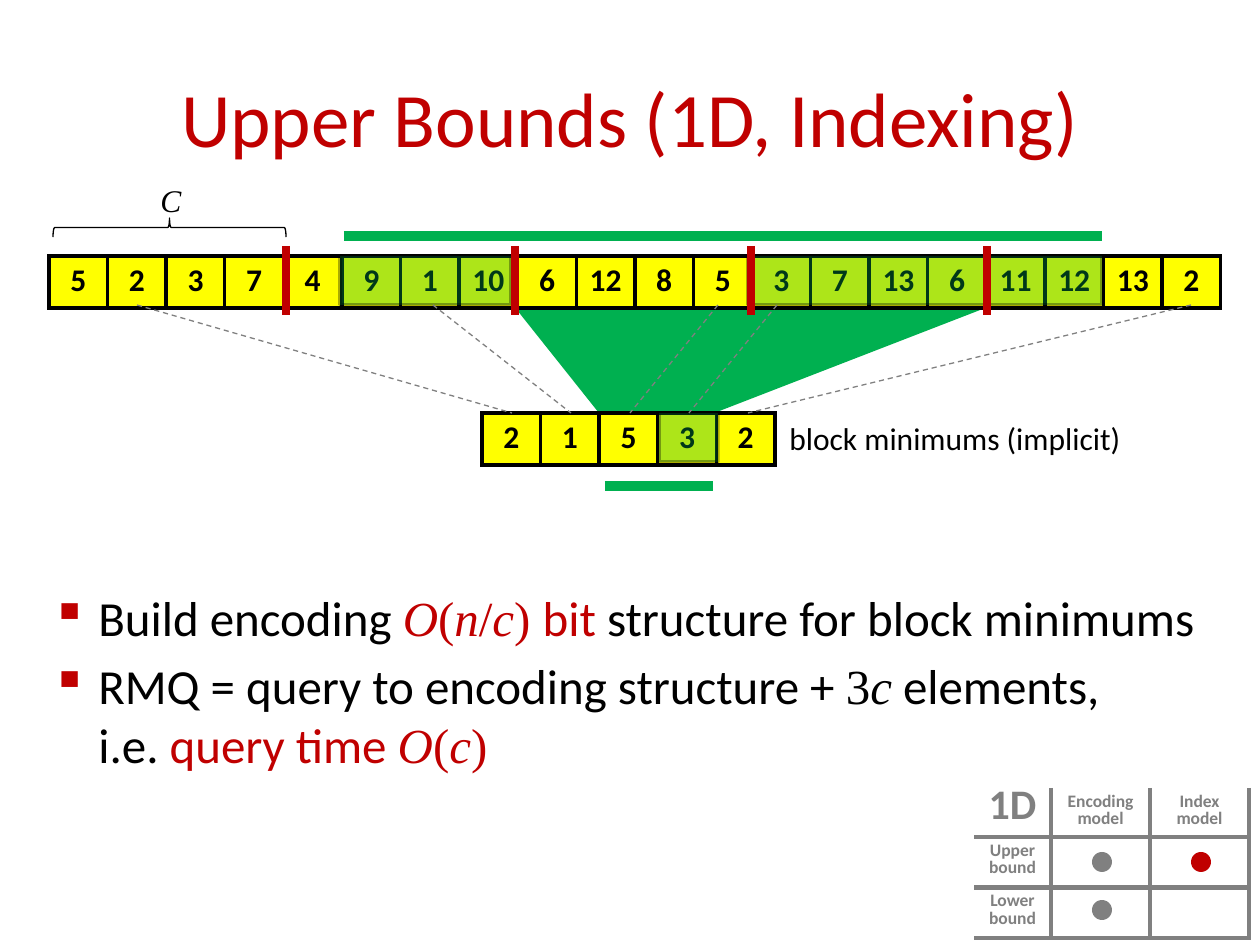
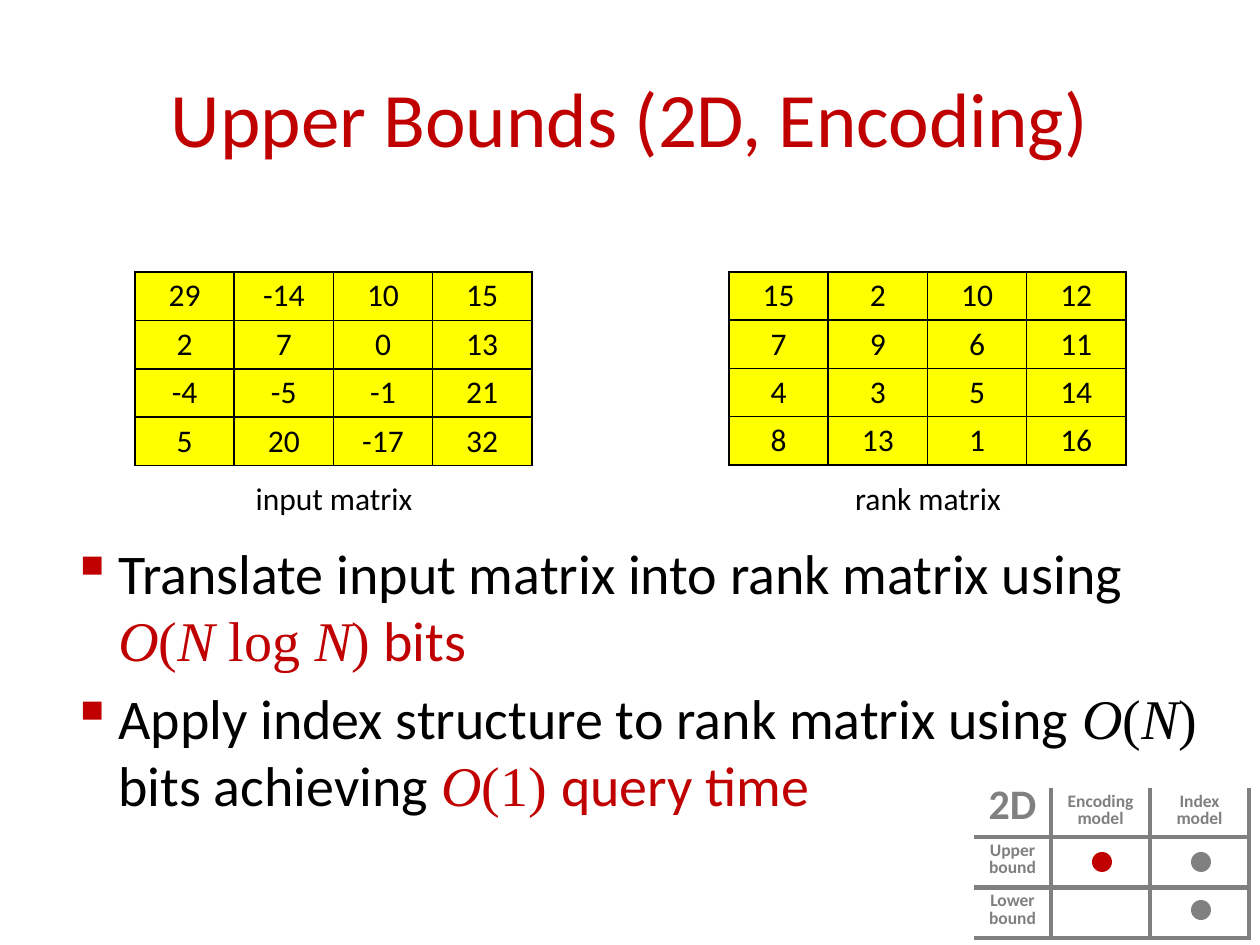
from itertools import groupby

from lxml.etree import SubElement
from pptx import Presentation
from pptx.dml.color import RGBColor
from pptx.enum.dml import MSO_LINE
from pptx.enum.shapes import MSO_CONNECTOR, MSO_SHAPE
from pptx.enum.text import MSO_ANCHOR, PP_ALIGN
from pptx.oxml.ns import qn
from pptx.util import Pt

PX = 914400 / 126
RED = RGBColor(0xC0, 0x00, 0x00)
GREEN = RGBColor(0x00, 0xB0, 0x50)
YELLOW = RGBColor(0xFF, 0xFF, 0x00)
GRAY = RGBColor(0x80, 0x80, 0x80)
BLACK = RGBColor(0x00, 0x00, 0x00)
BODY_FONT = "Calibri"
MATH_FONT = "Times New Roman"

ARRAY = [5, 2, 3, 7, 4, 9, 1, 10, 6, 12, 8, 5, 3, 7, 13, 6, 11, 12, 13, 2]
BLOCK_MINIMUMS = [2, 1, 5, 3, 2]
INPUT_MATRIX = [[29, -14, 10, 15], [2, 7, 0, 13], [-4, -5, -1, 21], [5, 20, -17, 32]]
RANK_MATRIX = [[15, 2, 10, 12], [7, 9, 6, 11], [4, 3, 5, 14], [8, 13, 1, 16]]

ARRAY_TOP, ARRAY_BOTTOM = 256, 305
MINIMUMS_TOP = 413
CELL_WIDTH = 59
BLOCK_BORDERS = [286, 515, 751, 987]
MINIMUM_SOURCES = [137, 433, 718, 777, 1191]


def emu(*lengths):
    return [round(length * PX) for length in lengths]


def add_run(paragraph, text, size, color=BLACK, font=BODY_FONT, bold=False, italic=False):
    run = paragraph.add_run()
    run.text = text
    run.font.size = Pt(size)
    run.font.name = font
    run.font.bold = bold
    run.font.italic = italic
    run.font.color.rgb = color


def add_math(paragraph, formula, size, color):
    """Set a formula with its one-letter names in italics."""
    for is_word, letters in groupby(formula, str.isalpha):
        text = "".join(letters)
        add_run(paragraph, text, size, color, MATH_FONT, italic=is_word and len(text) == 1)


def add_titled_slide(deck, heading):
    slide = deck.slides.add_slide(deck.slide_layouts[5])
    title = slide.shapes.title
    title.left, title.top, title.width, title.height = emu(63, 38, 1134, 158)
    title.text_frame.vertical_anchor = MSO_ANCHOR.MIDDLE
    paragraph = title.text_frame.paragraphs[0]
    paragraph.alignment = PP_ALIGN.CENTER
    add_run(paragraph, heading, 44, RED)
    return slide


def add_text_frame(slide, left, top, width, height):
    frame = slide.shapes.add_textbox(*emu(left, top, width, height)).text_frame
    frame.word_wrap = True
    return frame


def add_label(slide, text, left, top, width, align=PP_ALIGN.CENTER, **style):
    paragraph = add_text_frame(slide, left, top, width, 50).paragraphs[0]
    paragraph.alignment = align
    add_run(paragraph, text, 18, **style)


def add_bullets(slide, box, size, items):
    """Add bullets made of (kind, text, colour) pieces; kind is text, math or break."""
    frame = add_text_frame(slide, *box)
    for index, pieces in enumerate(items):
        paragraph = frame.paragraphs[0] if index == 0 else frame.add_paragraph()
        paragraph.space_before = Pt(size * 0.2)
        properties = paragraph._p.get_or_add_pPr()
        indent = emu(47)[0]
        properties.set("marL", str(indent))
        properties.set("indent", str(-indent))
        bullet_color = SubElement(properties, qn("a:buClr"))
        SubElement(bullet_color, qn("a:srgbClr"), val=str(RED))
        SubElement(properties, qn("a:buChar"), char="▪")
        for kind, text, color in pieces:
            if kind == "break":
                paragraph.add_line_break()
            elif kind == "math":
                add_math(paragraph, text, size, color)
            else:
                add_run(paragraph, text, size, color)


def set_borders(cell, color, width, sides="LRTB"):
    properties = cell._tc.get_or_add_tcPr()
    for side in "LRTB":
        line = SubElement(properties, qn(f"a:ln{side}"), w=str(Pt(width)))
        if side in sides:
            fill = SubElement(line, qn("a:solidFill"))
            SubElement(fill, qn("a:srgbClr"), val=str(color))
        else:
            SubElement(line, qn("a:noFill"))


def add_plain_table(slide, rows, columns, box):
    table = slide.shapes.add_table(rows, columns, *emu(*box)).table
    table.first_row = table.horz_banding = False
    return table


def add_number_table(slide, numbers, box, border, bold=False, margin=6):
    table = add_plain_table(slide, len(numbers), len(numbers[0]), box)
    for row, values in enumerate(numbers):
        for column, value in enumerate(values):
            cell = table.cell(row, column)
            cell.margin_top = cell.margin_bottom = emu(margin)[0]
            set_borders(cell, BLACK, border)
            cell.fill.solid()
            cell.fill.fore_color.rgb = YELLOW
            paragraph = cell.text_frame.paragraphs[0]
            paragraph.alignment = PP_ALIGN.CENTER
            add_run(paragraph, str(value), 18, bold=bold)


def add_overview(slide, dimension, dots):
    """Add the corner grid; dots maps (row, column) of a result to its colour."""
    labels = [
        [[dimension], ["Encoding", "model"], ["Index", "model"]],
        [["Upper", "bound"], [""], [""]],
        [["Lower", "bound"], [""], [""]],
    ]
    table = add_plain_table(slide, 3, 3, (974, 788, 275, 147))
    for column, width in zip(table.columns, emu(77, 99, 99)):
        column.width = width
    for row, row_labels in enumerate(labels):
        for column, lines in enumerate(row_labels):
            cell = table.cell(row, column)
            sides = "RB" + ("L" if column else "") + ("T" if row else "")
            set_borders(cell, GRAY, 3, sides)
            cell.fill.background()
            for index, text in enumerate(lines):
                frame = cell.text_frame
                paragraph = frame.paragraphs[0] if index == 0 else frame.add_paragraph()
                paragraph.alignment = PP_ALIGN.CENTER
                paragraph.line_spacing = Pt(10)
                add_run(paragraph, text, 24 if text == dimension else 10, GRAY, bold=True)
    table.cell(0, 0).vertical_anchor = MSO_ANCHOR.BOTTOM
    for (row, column), color in dots.items():
        dot = add_shape(slide, MSO_SHAPE.OVAL, 1092 + 99 * column, 852 + 48 * row, 20, 20)
        fill_shape(dot, color)


def add_shape(slide, kind, left, top, width, height):
    shape = slide.shapes.add_shape(kind, *emu(left, top, width, height))
    shape.shadow.inherit = False
    return shape


def fill_shape(shape, color):
    shape.fill.solid()
    shape.fill.fore_color.rgb = color
    shape.line.fill.background()


def add_line(slide, start, end, color, width, dash=None):
    line = slide.shapes.add_connector(MSO_CONNECTOR.STRAIGHT, *emu(*start, *end))
    line.line.color.rgb = color
    line.line.width = Pt(width)
    if dash:
        line.line.dash_style = dash
    SubElement(line._element.spPr, qn("a:effectLst"))


def add_query_overlay(slide, left, top, width):
    overlay = add_shape(slide, MSO_SHAPE.RECTANGLE, left, top, width, 49)
    fill_shape(overlay, GREEN)
    overlay.line.color.rgb = BLACK
    overlay.line.width = Pt(2)
    for color in overlay._element.spPr.iter(qn("a:srgbClr")):
        SubElement(color, qn("a:alpha"), val="32000")


def add_query_funnel(slide):
    """Join the blocks inside the query to their minimums."""
    builder = slide.shapes.build_freeform(513, 305, scale=PX)
    builder.add_line_segments([(599, 413), (717, 412), (988, 307)])
    funnel = builder.convert_to_shape()
    funnel.shadow.inherit = False
    fill_shape(funnel, GREEN)


def add_block_brace(slide):
    brace = add_shape(slide, MSO_SHAPE.LEFT_BRACE, 160, 111, 19, 233)
    brace.rotation = 90
    brace.fill.background()
    brace.line.color.rgb = BLACK
    brace.line.width = Pt(0.75)
    add_label(slide, "C", 122, 175, 98, font=MATH_FONT, italic=True)


def build_indexing_slide(deck):
    slide = add_titled_slide(deck, "Upper Bounds (1D, Indexing)")
    add_query_funnel(slide)
    add_number_table(slide, [BLOCK_MINIMUMS], (482, MINIMUMS_TOP, 293, 52), 2.25, bold=True)
    add_number_table(slide, [ARRAY], (49, ARRAY_TOP, 1172, 52), 2.25, bold=True)
    for left, right, y in [(344, 1102, 236), (605, 713, 486)]:
        add_line(slide, (left, y), (right, y), GREEN, 6)
    for left, top, width in [
        (340, ARRAY_TOP, 171),
        (748, ARRAY_TOP, 354),
        (659, MINIMUMS_TOP, CELL_WIDTH),
    ]:
        add_query_overlay(slide, left, top, width)
    add_block_brace(slide)
    for index, source in enumerate(MINIMUM_SOURCES):
        target = (512 + CELL_WIDTH * index, MINIMUMS_TOP)
        add_line(slide, (source, ARRAY_BOTTOM), target, GRAY, 0.75, MSO_LINE.DASH)
    for x in BLOCK_BORDERS:
        add_line(slide, (x, 246), (x, 315), RED, 4.5)
    add_label(slide, "block minimums (implicit)", 777, 413, 384, PP_ALIGN.LEFT)
    add_bullets(slide, (39, 581, 1182, 217), 28, [
        [
            ("text", "Build encoding ", BLACK),
            ("math", "O(n/c) ", RED),
            ("text", "bit ", RED),
            ("text", "structure for block minimums", BLACK),
        ],
        [
            ("text", "RMQ = query to encoding structure + ", BLACK),
            ("math", "3c", BLACK),
            ("text", " elements,", BLACK),
            ("break", "", BLACK),
            ("text", "i.e. ", BLACK),
            ("text", "query time ", RED),
            ("math", "O(c)", RED),
        ],
    ])
    add_overview(slide, "1D", {(0, 0): GRAY, (1, 0): GRAY, (0, 1): RED})


def build_encoding_slide(deck):
    slide = add_titled_slide(deck, "Upper Bounds (2D, Encoding)")
    for matrix, caption, left in [
        (INPUT_MATRIX, "input matrix", 135),
        (RANK_MATRIX, "rank matrix", 729),
    ]:
        add_number_table(slide, matrix, (left, 272, 397, 193), 1, margin=5)
        add_label(slide, caption, left + 2, 473, 394)
    add_bullets(slide, (59, 532, 1172, 368), 32, [
        [
            ("text", "Translate input matrix into rank matrix using ", BLACK),
            ("math", "O(N log N)", RED),
            ("text", " bits", RED),
        ],
        [
            ("text", "Apply index structure to rank matrix using ", BLACK),
            ("math", "O(N)", BLACK),
            ("text", " bits achieving ", BLACK),
            ("math", "O(1) ", RED),
            ("text", "query time", RED),
        ],
    ])
    add_overview(slide, "2D", {(0, 0): RED, (0, 1): GRAY, (1, 1): GRAY})


def main():
    deck = Presentation()
    deck.slide_width, deck.slide_height = emu(1260, 945)
    build_indexing_slide(deck)
    build_encoding_slide(deck)
    deck.save("out.pptx")


if __name__ == "__main__":
    main()
